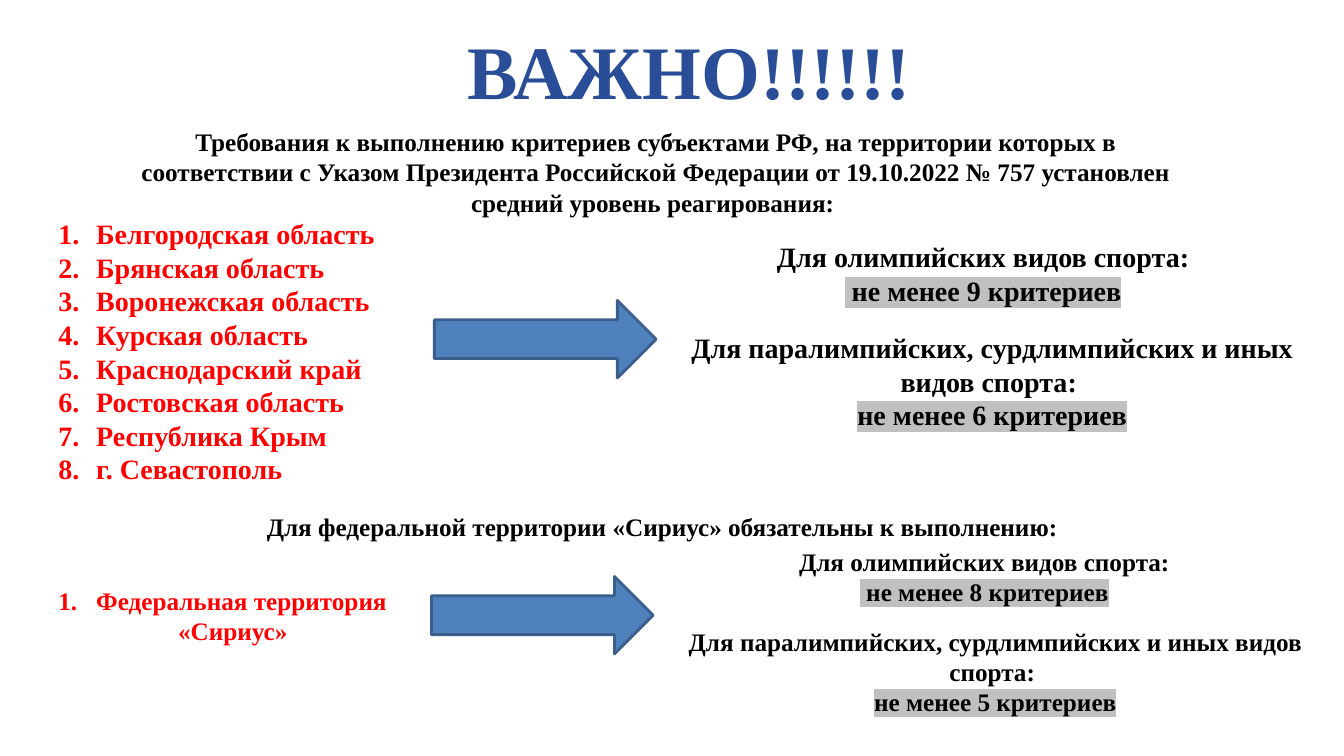
"""Build the slide on sport criteria for regions with a medium response level."""
from lxml import etree
from pptx import Presentation
from pptx import util as u
from pptx.dml.color import RGBColor
from pptx.enum import shapes, text
from pptx.oxml import ns

COLOURS = {"title": "294E97", "body": "000000", "region": "FF0000",
           "mark": "C0C0C0", "arrow": "4F81BD", "edge": "3A5F8C"}
CENTER, LEFT = text.PP_ALIGN.CENTER, text.PP_ALIGN.LEFT
TOP, MIDDLE = text.MSO_ANCHOR.TOP, text.MSO_ANCHOR.MIDDLE

deck = Presentation()
deck.slide_width, deck.slide_height = u.Pt(960), u.Pt(540)
page = deck.slides.add_slide(deck.slide_layouts[6])


def add_text(place, lines, size, colour="body", align=CENTER, anchor=TOP, inset=True):
    """Add a text box and return its paragraphs."""
    frame = page.shapes.add_textbox(*map(u.Pt, place)).text_frame
    frame.word_wrap = True
    frame.vertical_anchor = anchor
    if not inset:
        for side in ("left", "right", "top", "bottom"):
            setattr(frame, f"margin_{side}", 0)
    for index, line in enumerate(lines):
        para = frame.paragraphs[0] if index == 0 else frame.add_paragraph()
        para.alignment = align
        para.line_spacing = u.Pt(size * 1.2)
        span = para.add_run()
        span.text = line
        for name, value in {"name": "Times New Roman", "size": u.Pt(size), "bold": True}.items():
            setattr(span.font, name, value)
        span.font.color.rgb = RGBColor.from_string(COLOURS[colour])
    return frame.paragraphs


def number(para):
    """Turn a paragraph into a numbered list item."""
    props = para._p.get_or_add_pPr()
    props.set("marL", str(u.Pt(27)))
    props.set("indent", str(u.Pt(-27)))
    etree.SubElement(props, ns.qn("a:buFont"), typeface="+mj-lt")
    etree.SubElement(props, ns.qn("a:buAutoNum"), type="arabicPeriod")


add_text((60.5, 0, 864, 98.6), ["ВАЖНО!!!!!!"], 54, "title", anchor=MIDDLE, inset=False)
add_text((88.6, 90.4, 759.6, 65),
         ["Требования к выполнению критериев субъектами РФ, на территории которых в "
          "соответствии с Указом Президента Российской Федерации от 19.10.2022 № 757 "
          "установлен средний уровень реагирования: "], 18, inset=False)

regions = ["Белгородская область", "Брянская область", "Воронежская область",
           "Курская область", "Краснодарский край", "Ростовская область",
           "Республика Крым", "г. Севастополь"]
for item in add_text((34.6, 151.2, 260.6, 200.9), regions, 20, "region", LEFT):
    number(item)

add_text((164.9, 361.4, 616.3, 28.8),
         ["Для федеральной территории «Сириус» обязательны к выполнению:"], 18)
territory, sirius = add_text((34.6, 414.7, 480.2, 51.1),
                             ["Федеральная территория", "«Сириус»"], 18, "region", LEFT)
number(territory)
sirius._p.get_or_add_pPr().set("marL", str(u.Pt(85.5)))

olympic = "Для олимпийских видов спорта:"
other = "Для паралимпийских, сурдлимпийских и иных видов спорта: "
requirements = [
    ((491, 167.8, 422.6, 77.8), olympic, " не менее 9 критериев", 20),
    ((465.1, 232.6, 487.4, 79.9), other, "не менее 6 критериев", 20),
    ((463, 386.6, 480.2, 51.1), olympic, " не менее 8 критериев", 18),
    ((470.9, 443.5, 480.2, 72.7), other, "не менее 5 критериев", 18),
]
for place, sports, minimum, size in requirements:
    span = add_text(place, [sports, minimum], size)[1].runs[0]
    mark = etree.Element(ns.qn("a:highlight"))
    etree.SubElement(mark, ns.qn("a:srgbClr"), val=COLOURS["mark"])
    span._r.get_or_add_rPr().find(ns.qn("a:latin")).addprevious(mark)

for left, top in ((310.3, 214.6), (308.2, 411.8)):
    arrow = page.shapes.add_shape(shapes.MSO_SHAPE.RIGHT_ARROW,
                                  *map(u.Pt, (left, top, 158.4, 55.4)))
    arrow.shadow.inherit = False
    arrow.fill.solid()
    arrow.fill.fore_color.rgb = RGBColor.from_string(COLOURS["arrow"])
    arrow.line.color.rgb = RGBColor.from_string(COLOURS["edge"])
    arrow.line.width = u.Pt(2)

deck.save("out.pptx")
